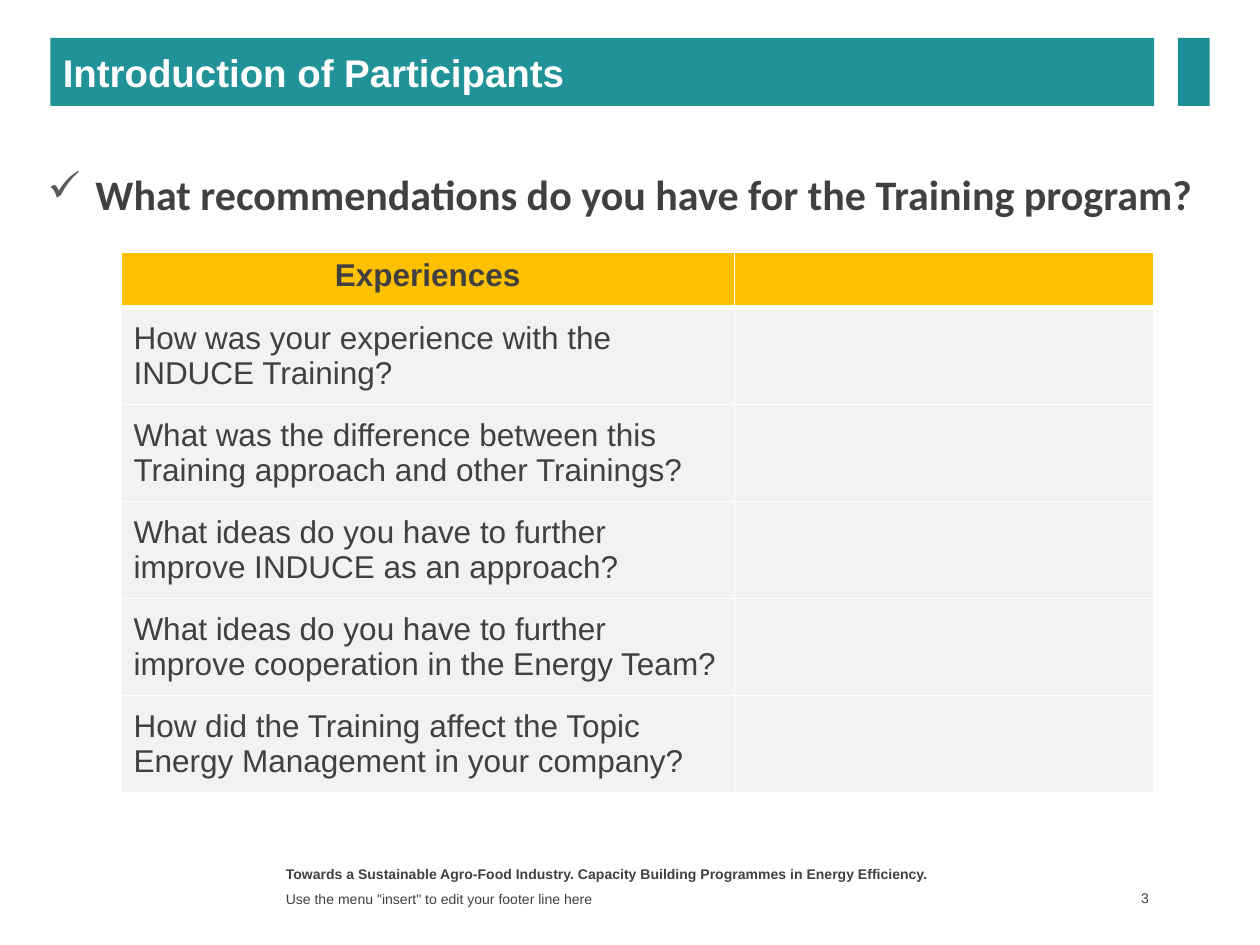
from lxml import etree
from pptx import Presentation
from pptx.dml.color import RGBColor
from pptx.enum.shapes import MSO_SHAPE
from pptx.enum.text import MSO_ANCHOR, PP_ALIGN
from pptx.oxml.ns import qn
from pptx.util import Inches, Pt

RECTANGLE = MSO_SHAPE.RECTANGLE
TOP, MIDDLE = MSO_ANCHOR.TOP, MSO_ANCHOR.MIDDLE
LEFT, CENTER, RIGHT = PP_ALIGN.LEFT, PP_ALIGN.CENTER, PP_ALIGN.RIGHT

THEME = {
    "teal": "209298", "accent": "1B8E95", "gold": "FFC000", "cell": "F2F2F2",
    "text": "404040", "bullet": "595959", "white": "FFFFFF",
    "title_size": 22, "question_size": 24, "table_size": 18, "footer_size": 8,
}


def write(frame, text, size, color="text", font="Arial", bold=False,
          align=LEFT, anchor=TOP, bullet=None):
    """Write one formatted paragraph into a text frame."""
    frame.word_wrap = True
    frame.vertical_anchor = anchor
    para = frame.paragraphs[0]
    para.alignment = align
    if bullet:
        para.space_after = Pt(6)
        properties = para._p.get_or_add_pPr()
        properties.set("marL", str(Inches(0.38)))
        properties.set("indent", str(-Inches(0.38)))
        bullet_color = etree.SubElement(properties, qn("a:buClr"))
        etree.SubElement(bullet_color, qn("a:srgbClr"), val=THEME["bullet"])
        etree.SubElement(properties, qn("a:buChar"), char=bullet)
    span = para.add_run()
    span.text = text
    span.font.name = font
    span.font.size = Pt(THEME[size])
    span.font.bold = bold
    span.font.color.rgb = RGBColor.from_string(THEME[color])


def style_cell(cell, fill, top, bottom):
    """Give a table cell white borders and a plain fill."""
    properties = cell._tc.get_or_add_tcPr()
    for side, width in (("L", 1), ("R", 1), ("T", top), ("B", bottom)):
        line = etree.SubElement(properties, qn(f"a:ln{side}"), w=str(Pt(width)))
        paint = etree.SubElement(line, qn("a:solidFill"))
        etree.SubElement(paint, qn("a:srgbClr"), val=THEME["white"])
    cell.fill.solid()
    cell.fill.fore_color.rgb = RGBColor.from_string(THEME[fill])


deck = Presentation()
deck.slide_width, deck.slide_height = Inches(10), Inches(7.5)
page = deck.slides.add_slide(deck.slide_layouts[6])

# Footer lines, page number and main question
text_boxes = [
    ((2.17, 6.82, 5.5, 0.21),
     "Towards a Sustainable Agro-Food Industry. Capacity Building Programmes in Energy Efficiency.",
     {"size": "footer_size", "bold": True}),
    ((2.17, 7.04, 5.5, 0.19), 'Use the menu "insert" to edit your footer line here',
     {"size": "footer_size", "anchor": MIDDLE}),
    ((8.6, 7.03, 0.56, 0.2), "3",
     {"size": "footer_size", "align": RIGHT, "anchor": MIDDLE}),
    ((0.28, 1.29, 9.44, 5.31), "What recommendations do you have for the Training program?",
     {"size": "question_size", "font": "Calibri", "bold": True, "bullet": "✓"}),
]
for place, text, style in text_boxes:
    box = page.shapes.add_textbox(*map(Inches, place))
    if style.get("align") == RIGHT:
        box.text_frame.margin_right = Inches(0.04)
    write(box.text_frame, text, **style)

# Experience table, with an empty column for answers
questions = [
    "How was your experience with the INDUCE Training?",
    "What was the difference between this Training approach and other Trainings?",
    "What ideas do you have to further improve INDUCE as an approach?",
    "What ideas do you have to further improve cooperation in the Energy Team?",
    "How did the Training affect the Topic Energy Management in your company?",
]
table = page.shapes.add_table(
    len(questions) + 1, 2, Inches(0.96), Inches(2), Inches(8.2), Inches(4.29)).table
for column, width in zip(table.columns, (4.87, 3.33)):
    column.width = Inches(width)
for index, text in enumerate(["Experiences"] + questions):
    header = index == 0
    table.rows[index].height = Inches(0.44 if header else 0.77)
    for cell in table.rows[index].cells:
        style_cell(cell, "gold" if header else "cell",
                   top=3 if index == 1 else 1, bottom=3 if header else 1)
    label = table.cell(index, 0)
    label.vertical_anchor = TOP if header else MIDDLE
    write(label.text_frame, text, "table_size", bold=header,
          align=CENTER if header else LEFT, anchor=None)

# Title bar and accent block
for left, width, color, title in (
        (0.4, 8.76, "teal", "Introduction of Participants"),
        (9.35, 0.25, "accent", None)):
    bar = page.shapes.add_shape(
        RECTANGLE, Inches(left), Inches(0.3), Inches(width), Inches(0.54))
    bar.shadow.inherit = False
    bar.fill.solid()
    bar.fill.fore_color.rgb = RGBColor.from_string(THEME[color])
    bar.line.fill.background()
    if title:
        write(bar.text_frame, title, "title_size", color="white", bold=True, anchor=MIDDLE)

deck.save("out.pptx")
